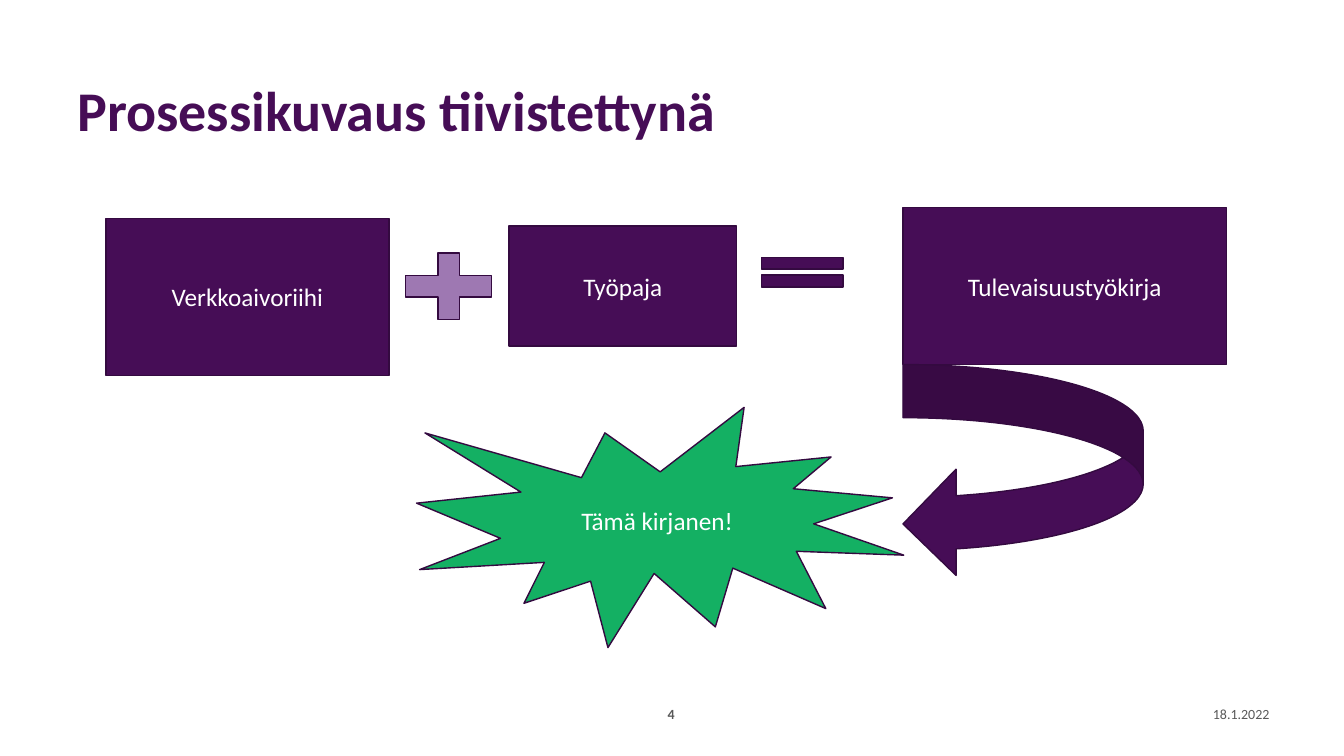
from pptx import Presentation
from pptx import util as u
from pptx.dml import color
from pptx.enum import shapes, text

COLUMNS, ROWS = 160, 90
CELL = u.Inches(13.333) / COLUMNS
PURPLE, DARK, LILAC, GREEN = "460D56", "340A40", "9E78B2", "14B063"
WHITE, GREY = "FFFFFF", "595959"
KIND = shapes.MSO_SHAPE
ALIGN = text.PP_ALIGN


def paint(target, code):
    """Give a font or line colour, or a solid fill, a hex colour."""
    if hasattr(target, "solid"):
        target.solid()
        target.fore_color.rgb = color.RGBColor.from_string(code)
    else:
        target.color.rgb = color.RGBColor.from_string(code)


def cells(*grid):
    """Turn grid columns and rows into slide lengths."""
    return [u.Emu(round(value * CELL)) for value in grid]


def write(box, words, size, code, align, bold=False):
    """Put one vertically centred line of text in a box."""
    frame = box.text_frame
    frame.text = words
    frame.word_wrap = True
    frame.vertical_anchor = text.MSO_ANCHOR.MIDDLE
    para = frame.paragraphs[0]
    para.alignment = align
    font = para.runs[0].font
    font.name, font.size, font.bold = "Calibri", u.Pt(size), bold
    paint(font, code)


def add_title(page, words, grid):
    """Place and format the title placeholder."""
    title = page.shapes.title
    title.left, title.top, title.width, title.height = cells(*grid)
    write(title, words, 40, PURPLE, ALIGN.LEFT, bold=True)
    title.text_frame.paragraphs[0].line_spacing = 0.9


def add_footer(page, words, grid, align, bold=False):
    """Add a small grey footer text."""
    box = page.shapes.add_textbox(*cells(*grid))
    write(box, words, 10, GREY, align, bold)


def add_figure(page, kind, grid, fill=PURPLE, words=None):
    """Add an outlined preset shape with an optional label."""
    figure = page.shapes.add_shape(kind, *cells(*grid))
    figure.shadow.inherit = False
    paint(figure.fill, fill)
    paint(figure.line, DARK)
    figure.line.width = u.Pt(1)
    if words:
        write(figure, words, 18, WHITE, ALIGN.CENTER)


def main():
    """Build and save the process slide."""
    deck = Presentation()
    deck.slide_width, deck.slide_height = cells(COLUMNS, ROWS)
    page = deck.slides.add_slide(deck.slide_layouts[5])
    add_title(page, "Prosessikuvaus tiivistettynä", (8, 4.8, 124.4, 17.4))
    add_footer(page, "18.1.2022", (139, 83.4, 13.3, 3.2), ALIGN.RIGHT)
    add_footer(page, "4", (76.3, 83.4, 7.2, 3.2), ALIGN.CENTER, bold=True)
    add_figure(page, KIND.RECTANGLE, (12.6, 26, 33.7, 18.7), words="Verkkoaivoriihi")
    add_figure(page, KIND.MATH_PLUS, (46.4, 28.7, 14, 10.8), LILAC)
    add_figure(page, KIND.RECTANGLE, (60.6, 26.9, 27.1, 14.3), words="Työpaja")
    add_figure(page, KIND.MATH_EQUAL, (88.9, 29.4, 13.2, 6))
    add_figure(page, KIND.RECTANGLE, (107.5, 24.7, 38.5, 18.7), words="Tulevaisuustyökirja")
    add_figure(page, KIND.CURVED_LEFT_ARROW, (107.5, 43.4, 28.6, 25.3))
    add_figure(page, KIND.EXPLOSION1, (49.6, 48.5, 58, 28.6), GREEN, "Tämä kirjanen!")
    deck.save("out.pptx")


if __name__ == "__main__":
    main()
